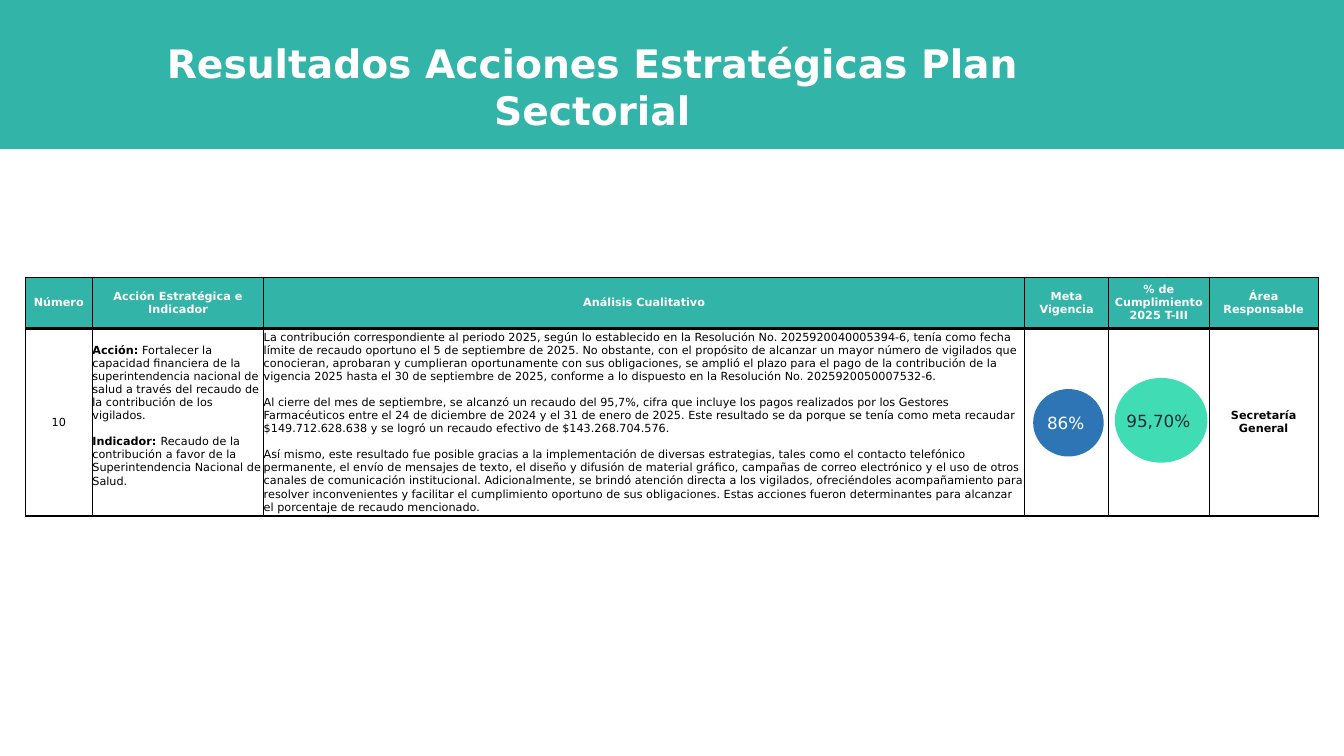
from dataclasses import dataclass

from lxml.etree import SubElement
from pptx import Presentation
from pptx.dml.color import RGBColor
from pptx.enum.shapes import MSO_SHAPE
from pptx.enum.text import MSO_ANCHOR, PP_ALIGN
from pptx.oxml.ns import qn
from pptx.util import Pt

TEAL, WHITE, BLACK = "32B4A8", "FFFFFF", "000000"
TITLE_STYLE = {"size": Pt(28), "bold": True, "name": "DejaVu Sans"}
HEADER_STYLE = {"size": Pt(8), "bold": True, "name": "DejaVu Sans"}
BODY_STYLE = {**HEADER_STYLE, "bold": False}
BADGE_STYLE = {**BODY_STYLE, "size": Pt(12)}
NO_MARGINS = dict.fromkeys(
    ("margin_left", "margin_top", "margin_right", "margin_bottom"), 0)
BLANK_LINE = 9.3


@dataclass
class Span:
    text: str
    bold: bool = False


@dataclass
class Column:
    width: float
    heading: list[str]
    body: list[list[Span]]
    align: PP_ALIGN = PP_ALIGN.CENTER
    bottom: float = 0


@dataclass
class Badge:
    text: str
    left: float
    top: float
    width: float
    height: float
    fill: str
    ink: str


COLUMNS = [
    Column(48, ["Número"], [[Span("10")]]),
    Column(122.4, ["Acción Estratégica e Indicador"], [
        [Span("Acción:", True),
         Span(" Fortalecer la capacidad financiera de la superintendencia nacional de "
              "salud a través del recaudo de la contribución de los vigilados.")],
        [Span("Indicador: ", True),
         Span("Recaudo de la contribución a favor de la Superintendencia Nacional de "
              "Salud.")],
    ], PP_ALIGN.LEFT, BLANK_LINE),
    Column(543.6, ["Análisis Cualitativo"], [
        [Span("La contribución correspondiente al periodo 2025, según lo establecido en la "
              "Resolución No. 2025920040005394-6, tenía como fecha límite de recaudo "
              "oportuno el 5 de septiembre de 2025. No obstante, con el propósito de "
              "alcanzar un mayor número de vigilados que conocieran, aprobaran y cumplieran "
              "oportunamente con sus obligaciones, se amplió el plazo para el pago de la "
              "contribución de la vigencia 2025 hasta el 30 de septiembre de 2025, conforme "
              "a lo dispuesto en la Resolución No. 2025920050007532-6.")],
        [Span("Al cierre del mes de septiembre, se alcanzó un recaudo del 95,7%, cifra que "
              "incluye los pagos realizados por los Gestores Farmacéuticos entre el 24 de "
              "diciembre de 2024 y el 31 de enero de 2025. Este resultado se da porque se "
              "tenía como meta recaudar $149.712.628.638 y se logró un recaudo efectivo de "
              "$143.268.704.576.")],
        [Span("Así mismo, este resultado fue posible gracias a la implementación de "
              "diversas estrategias, tales como el contacto telefónico permanente, el envío "
              "de mensajes de texto, el diseño y difusión de material gráfico, campañas de "
              "correo electrónico y el uso de otros canales de comunicación institucional. "
              "Adicionalmente, se brindó atención directa a los vigilados, ofreciéndoles "
              "acompañamiento para resolver inconvenientes y facilitar el cumplimiento "
              "oportuno de sus obligaciones. Estas acciones fueron determinantes para "
              "alcanzar el porcentaje de recaudo mencionado.")],
    ], PP_ALIGN.LEFT),
    Column(59.8, ["Meta", "Vigencia"], []),
    Column(72, ["% de Cumplimiento 2025 T-III"], []),
    Column(77.8, ["Área Responsable"], [[Span("Secretaría General", True)]]),
]
ROW_HEIGHTS = [36.7, 133.9]
BADGES = [
    Badge("86% ", 738, 277.9, 50.4, 48.2, "2E75B6", WHITE),
    Badge("95,70% ", 796.3, 270, 66.2, 60.5, "40DCB3", "222A35"),
]


def colour(value: str) -> RGBColor:
    return RGBColor.from_string(value)


def apply(target, values: dict) -> None:
    for name, value in values.items():
        setattr(target, name, value)


def write(frame, paragraphs: list[list[Span]], style: dict, ink: str,
          align: PP_ALIGN = PP_ALIGN.CENTER, gap: float = 0) -> None:
    for index, spans in enumerate(paragraphs):
        para = frame.add_paragraph() if index else frame.paragraphs[0]
        para.alignment = align
        if index and gap:
            para.space_before = Pt(gap)
        for item in spans:
            span = para.add_run()
            span.text = item.text
            apply(span.font, {**style, "bold": item.bold})
            span.font.color.rgb = colour(ink)


def add_plain_shape(page, kind: MSO_SHAPE, left: float, top: float,
                    width: float, height: float, fill: str):
    shape = page.shapes.add_shape(kind, Pt(left), Pt(top), Pt(width), Pt(height))
    shape.shadow.inherit = False
    shape.fill.solid()
    shape.fill.fore_color.rgb = colour(fill)
    shape.line.fill.background()
    return shape


def add_borders(cell, bottom: float) -> None:
    properties = cell._tc.get_or_add_tcPr()
    for side, weight in {"L": 1, "R": 1, "T": 1, "B": bottom}.items():
        line = SubElement(properties, qn(f"a:ln{side}"), w=str(Pt(weight)))
        fill = SubElement(line, qn("a:solidFill"))
        SubElement(fill, qn("a:srgbClr"), val=BLACK)


def add_results_table(page) -> None:
    width = sum(column.width for column in COLUMNS)
    table = page.shapes.add_table(len(ROW_HEIGHTS), len(COLUMNS), Pt(18), Pt(198),
                                  Pt(width), Pt(sum(ROW_HEIGHTS))).table
    for row, height in zip(table.rows, ROW_HEIGHTS):
        row.height = Pt(height)
    for index, column in enumerate(COLUMNS):
        table.columns[index].width = Pt(column.width)
        header, body = table.cell(0, index), table.cell(1, index)
        for cell, weight in ((header, 2), (body, 1)):
            apply(cell, {**NO_MARGINS, "vertical_anchor": MSO_ANCHOR.MIDDLE})
            add_borders(cell, weight)
        header.fill.solid()
        header.fill.fore_color.rgb = colour(TEAL)
        body.fill.background()
        body.margin_bottom = Pt(column.bottom)
        heading = [[Span(line, True)] for line in column.heading]
        write(header.text_frame, heading, HEADER_STYLE, WHITE)
        write(body.text_frame, column.body, BODY_STYLE, BLACK, column.align, BLANK_LINE)


def add_badge(page, badge: Badge) -> None:
    shape = add_plain_shape(page, MSO_SHAPE.OVAL, badge.left, badge.top,
                            badge.width, badge.height, badge.fill)
    apply(shape.text_frame, {**NO_MARGINS, "word_wrap": False,
                             "vertical_anchor": MSO_ANCHOR.MIDDLE})
    write(shape.text_frame, [[Span(badge.text)]], BADGE_STYLE, badge.ink)


def main() -> None:
    deck = Presentation()
    apply(deck, {"slide_width": Pt(960), "slide_height": Pt(540)})
    page = deck.slides.add_slide(deck.slide_layouts[6])

    # Title band
    add_plain_shape(page, MSO_SHAPE.RECTANGLE, 0, 0, 960, 106.6, TEAL)
    box = page.shapes.add_textbox(Pt(90), Pt(24.5), Pt(666), Pt(74.9))
    box.text_frame.word_wrap = True
    title = Span("Resultados Acciones Estratégicas Plan Sectorial", True)
    write(box.text_frame, [[title]], TITLE_STYLE, WHITE)

    # Table with the percentage badges over it
    add_results_table(page)
    for badge in BADGES:
        add_badge(page, badge)

    deck.save("out.pptx")


if __name__ == "__main__":
    main()
